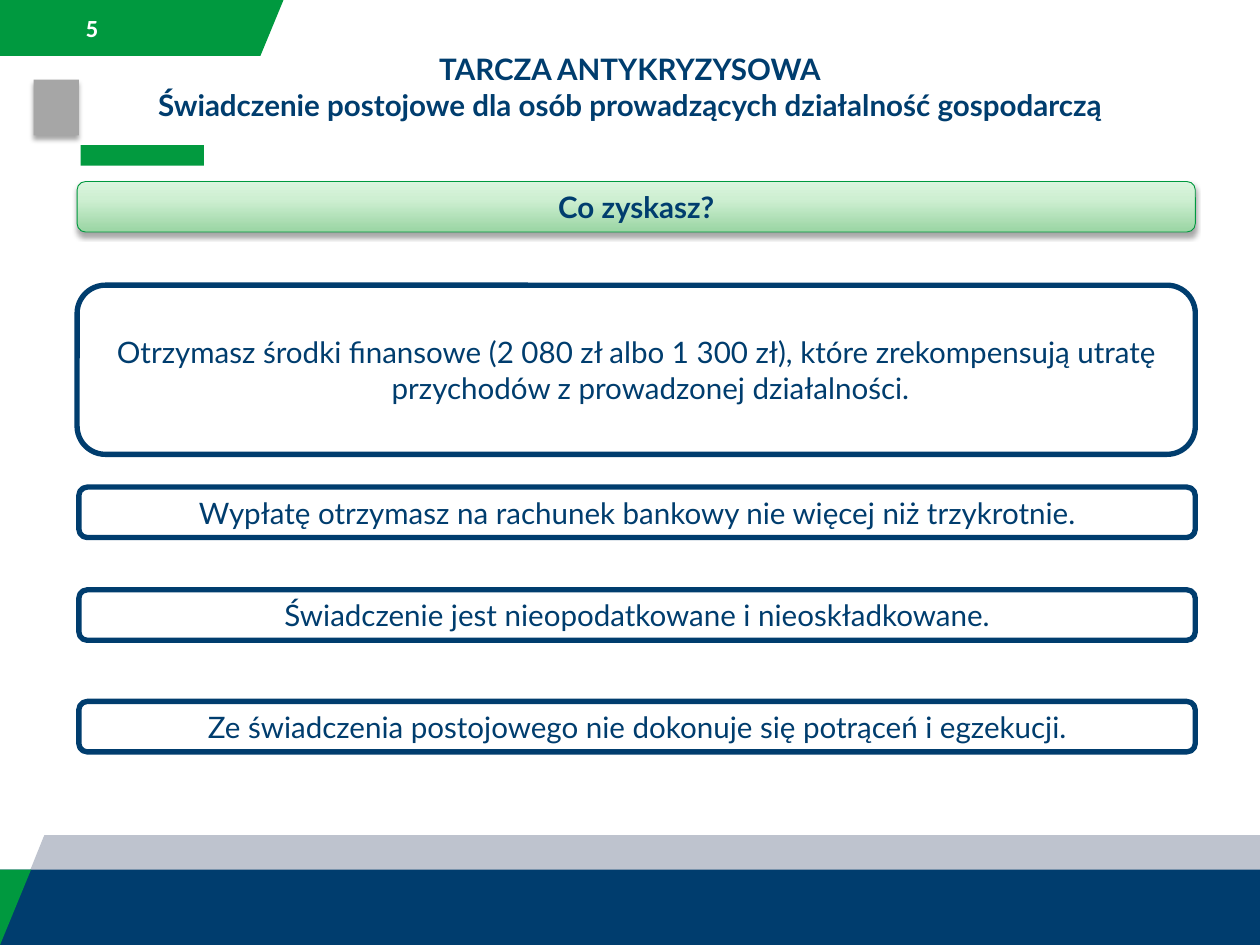
from copy import deepcopy

from lxml.etree import SubElement
from pptx import Presentation
from pptx.dml.color import RGBColor
from pptx.enum.shapes import MSO_SHAPE
from pptx.enum.text import MSO_ANCHOR, PP_ALIGN
from pptx.oxml.ns import qn
from pptx.util import Inches, Pt

COLORS = {
    "white": "FFFFFF", "green": "00993F", "accent": "029A3F", "navy": "003D6E",
    "silver": "BEC3CE", "gray": "A6A6A6", "shadow": "000000",
}
BANNER_STOPS = [(0, "9AD5A3"), (0.65, "CEEFD2"), (1, "DBF5DE")]
BODY_FONT = {"name": "Lato", "size": Pt(24), "bold": False}
BOLD_FONT = {**BODY_FONT, "bold": True}
NUMBER_FONT = {"name": "Calibri", "size": Pt(20), "bold": True}
MARGINS = ("margin_left", "margin_top", "margin_right", "margin_bottom")
WIDTH, HEIGHT = 14.22, 10.67
FOOTER_TOP = 9.82
TITLE = ["TARCZA ANTYKRYZYSOWA",
         "Świadczenie postojowe dla osób prowadzących działalność gospodarczą"]
BENEFIT = ["Otrzymasz środki finansowe (2 080 zł albo 1 300 zł), które zrekompensują utratę",
           "przychodów z prowadzonej działalności."]
RULES = [
    (5.5, "Wypłatę otrzymasz na rachunek bankowy nie więcej niż trzykrotnie."),
    (6.66, "Świadczenie jest nieopodatkowane i nieoskładkowane."),
    (7.92, "Ze świadczenia postojowego nie dokonuje się potrąceń i egzekucji."),
]


def apply(target, values):
    for name, value in values.items():
        setattr(target, name, value)


def rgb(name):
    return RGBColor.from_string(COLORS[name])


class SlideBuilder:
    """Holds the deck style and the current slide, and draws its elements."""

    def __init__(self, deck):
        self.page = deck.slides.add_slide(deck.slide_layouts[5])

    def fill_text(self, frame, lines, font, color="navy", align=PP_ALIGN.CENTER,
                  anchor=MSO_ANCHOR.MIDDLE, margin=0.06):
        apply(frame, {"word_wrap": True, "vertical_anchor": anchor,
                      **dict.fromkeys(MARGINS, Inches(margin))})
        for index, line in enumerate(lines):
            para = frame.paragraphs[0] if index == 0 else frame.add_paragraph()
            apply(para, {"alignment": align, "line_spacing": 1.0,
                         "space_before": Pt(0), "space_after": Pt(0)})
            span = para.add_run()
            span.text = line
            apply(span.font, font)
            span.font.color.rgb = rgb(color)

    def title(self, at, lines):
        box = self.page.shapes.title
        apply(box, dict(zip(("left", "top", "width", "height"), map(Inches, at))))
        self.fill_text(box.text_frame, lines, BOLD_FONT, anchor=MSO_ANCHOR.TOP, margin=0.05)

    def label(self, at, text, font, color):
        box = self.page.shapes.add_textbox(*map(Inches, at))
        self.fill_text(box.text_frame, [text], font, color, PP_ALIGN.LEFT)

    def shape(self, at, fill, kind=MSO_SHAPE.RECTANGLE, line=None, weight=0):
        box = self.page.shapes.add_shape(kind, *map(Inches, at))
        self.paint(box, fill)
        if line:
            box.line.color.rgb = rgb(line)
            box.line.width = Pt(weight)
        return box

    def paint(self, box, fill):
        box.shadow.inherit = False
        box.fill.solid()
        box.fill.fore_color.rgb = rgb(fill)
        box.line.fill.background()

    def polygon(self, points, fill):
        corners = [(Inches(x), Inches(y)) for x, y in points]
        builder = self.page.shapes.build_freeform(*corners[0])
        builder.add_line_segments(corners[1:], close=True)
        self.paint(builder.convert_to_shape(), fill)

    def panel(self, at, lines, weight=4.33, line="navy", font=BODY_FONT):
        box = self.shape(at, "white", MSO_SHAPE.ROUNDED_RECTANGLE, line, weight)
        self.fill_text(box.text_frame, lines, font)
        return box

    def gradient(self, box, stops, angle):
        box.fill.gradient()
        box.fill.gradient_angle = angle
        first = next(box._element.spPr.iter(qn("a:gs")))
        first.addnext(deepcopy(first))
        for stop, (position, color) in zip(box.fill.gradient_stops, stops):
            stop.position = position
            stop.color.rgb = RGBColor.from_string(color)

    def cast_shadow(self, box):
        effects = box._element.spPr.find(qn("a:effectLst"))
        outer = SubElement(effects, qn("a:outerShdw"), blurRad=str(Pt(4)),
                           dist=str(Pt(3)), dir="5400000", rotWithShape="0")
        color = SubElement(outer, qn("a:srgbClr"), val=COLORS["shadow"])
        SubElement(color, qn("a:alpha"), val="35000")


def main():
    deck = Presentation()
    apply(deck, {"slide_width": Inches(WIDTH), "slide_height": Inches(HEIGHT)})
    slide = SlideBuilder(deck)

    slide.polygon([(0, 0), (3.2, 0), (2.94, 0.63), (0, 0.63)], "green")
    slide.polygon([(0, HEIGHT), (0.5, 9.43), (WIDTH, 9.43), (WIDTH, HEIGHT)], "silver")
    slide.shape((0, FOOTER_TOP, WIDTH, HEIGHT - FOOTER_TOP), "navy")
    slide.polygon([(0, FOOTER_TOP), (0, HEIGHT), (0.35, FOOTER_TOP)], "green")
    slide.shape((0.91, 1.64, 1.39, 0.23), "accent")
    slide.label((0.91, 0.09, 0.85, 0.45), "5", NUMBER_FONT, "white")
    slide.cast_shadow(slide.shape((0.38, 0.9, 0.51, 0.63), "gray"))
    slide.title((0.81, 0.53, 12.6, 1.34), TITLE)

    banner = slide.panel((0.87, 2.05, 12.62, 0.57), ["Co zyskasz?"], 0.75, "green", BOLD_FONT)
    slide.gradient(banner, BANNER_STOPS, 90)
    slide.cast_shadow(banner)

    benefit = slide.panel((0.87, 3.22, 12.62, 1.91), BENEFIT)
    last = benefit.text_frame.paragraphs[-1]
    last._p.get_or_add_pPr().set("marL", str(Inches(0.32)))
    for top, text in RULES:
        slide.panel((0.89, top, 12.6, 0.57), [text])

    deck.save("out.pptx")


if __name__ == "__main__":
    main()
